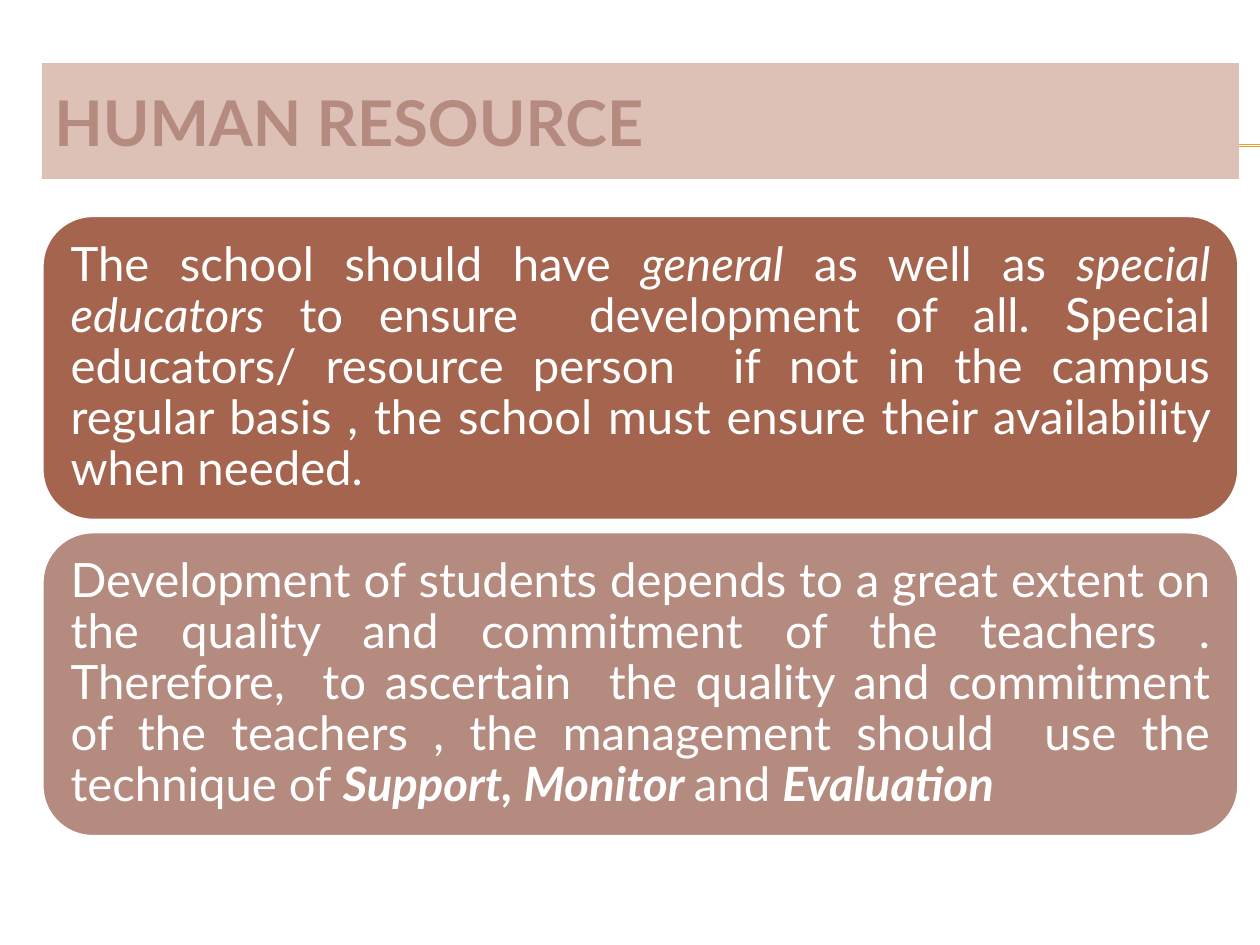
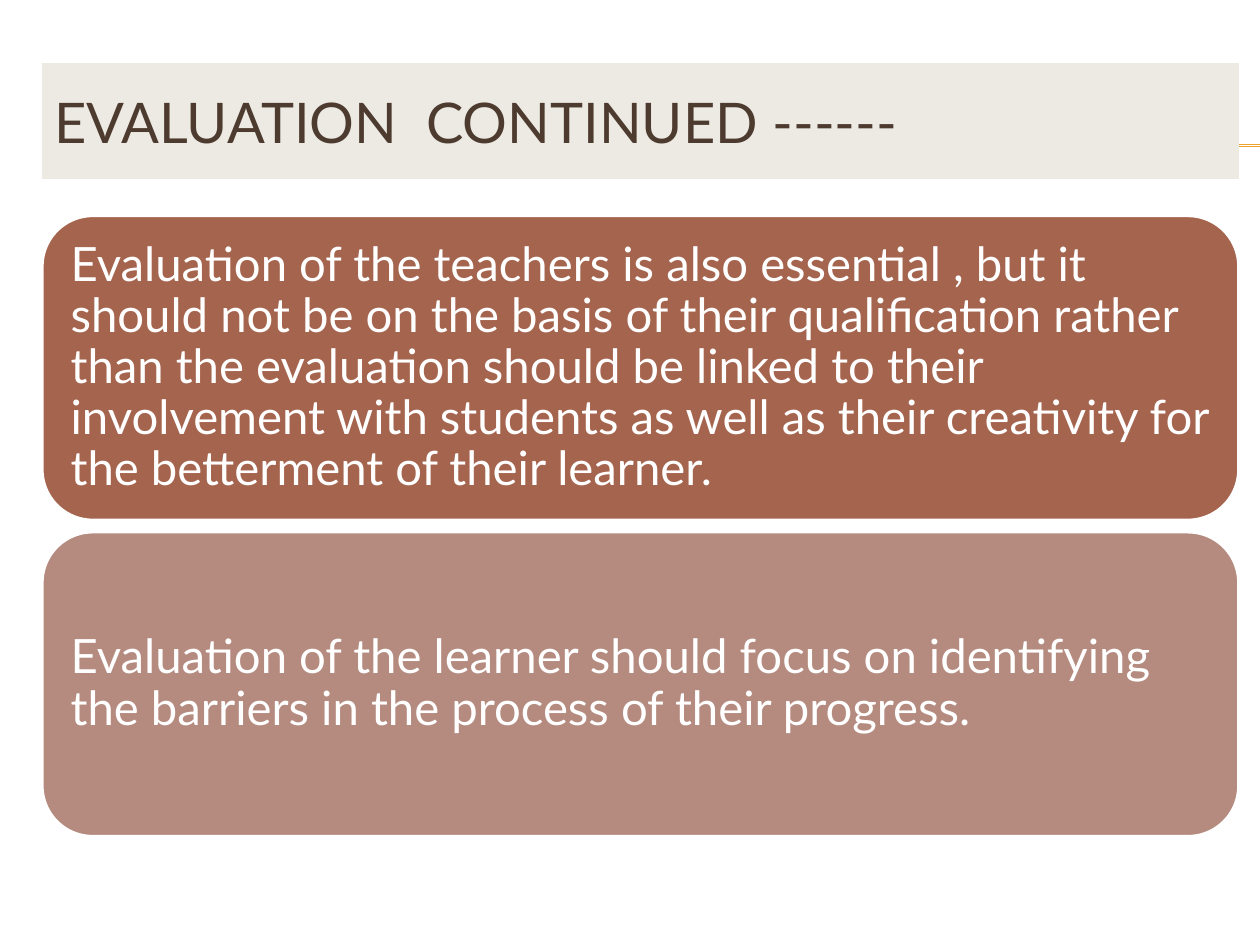
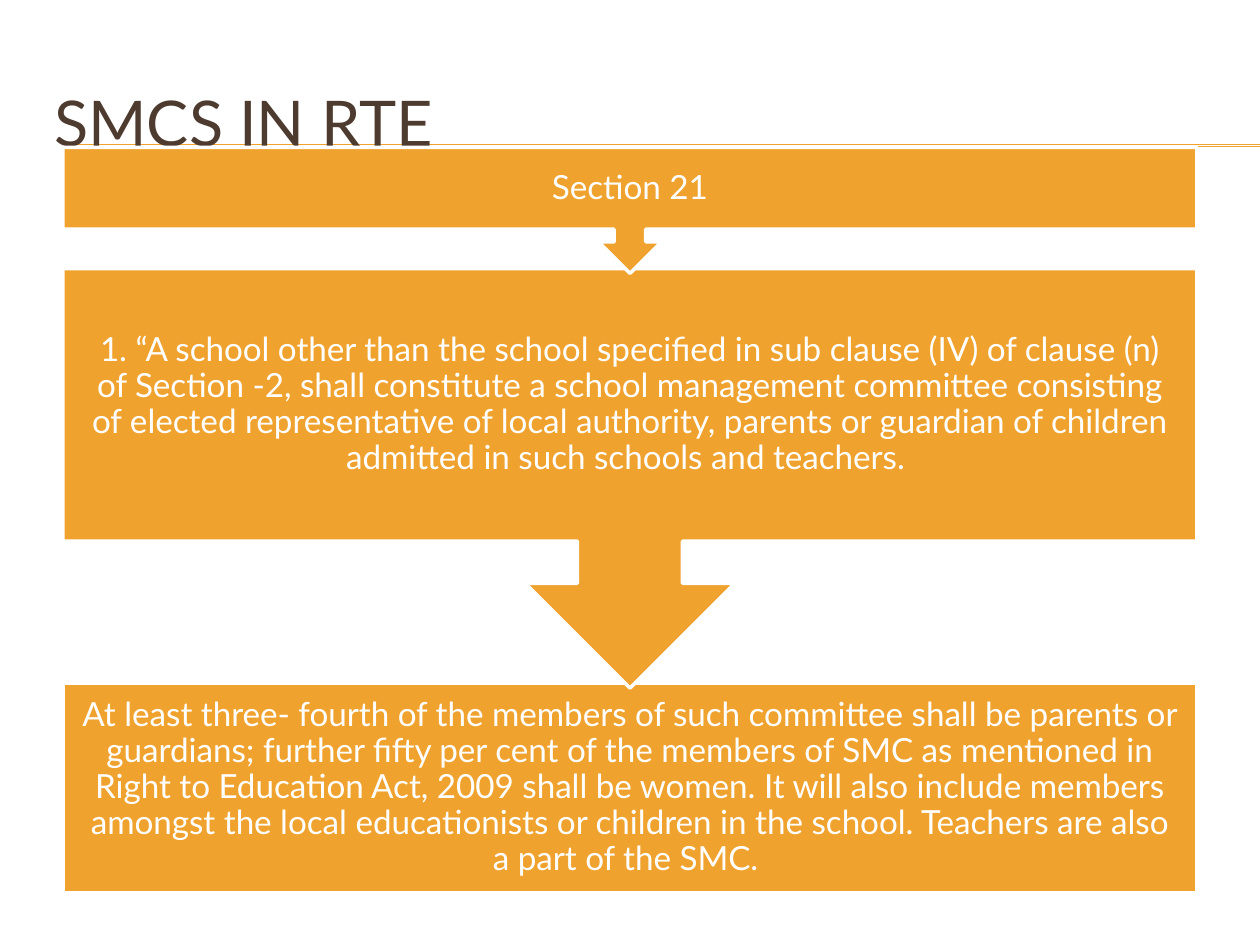
from dataclasses import dataclass

from lxml import etree
from pptx import Presentation
from pptx.dml.color import RGBColor
from pptx.enum.shapes import MSO_CONNECTOR, MSO_SHAPE
from pptx.enum.text import MSO_ANCHOR, PP_ALIGN
from pptx.oxml.ns import qn
from pptx.util import Inches, Pt

RECT = MSO_SHAPE.RECTANGLE
ROUND = MSO_SHAPE.ROUNDED_RECTANGLE
CALLOUT = MSO_SHAPE.DOWN_ARROW_CALLOUT
STRAIGHT = MSO_CONNECTOR.STRAIGHT
MIDDLE = MSO_ANCHOR.MIDDLE
LEFT, CENTER, JUSTIFY = PP_ALIGN.LEFT, PP_ALIGN.CENTER, PP_ALIGN.JUSTIFY

# The slide is a grid of 100 columns by 100 rows.
WIDTH, HEIGHT = Inches(10), Inches(7.5)
COL, ROW = WIDTH / 100, HEIGHT / 100


@dataclass(frozen=True)
class Theme:
    font: str = "Lato"
    white: str = "FFFFFF"
    dark: str = "4E3B30"
    gold: str = "F0A22E"
    rust: str = "A5644E"
    rose: str = "B58B80"
    blush: str = "DDC0B6"
    sand: str = "ECEAE3"
    title: int = 36
    small_title: int = 32
    body: int = 27
    step: int = 19


THEME = Theme()
PANELS = (THEME.rust, THEME.rose)


def color(code):
    return RGBColor.from_string(code)


def place(col, row, cols, rows):
    return [round(v) for v in (col * COL, row * ROW, cols * COL, rows * ROW)]


def write(shape, spans, size, ink, align=LEFT, inset=0.11, spacing=0.9):
    """Fill a shape with one paragraph of (text, style) spans; b is bold, i italic."""
    frame = shape.text_frame
    frame.word_wrap = True
    frame.vertical_anchor = MIDDLE
    frame.margin_left = frame.margin_right = Inches(inset)
    frame.margin_top = frame.margin_bottom = Inches(inset)
    para = frame.paragraphs[0]
    para.alignment = align
    para.line_spacing = spacing
    for text, style in spans:
        run = para.add_run()
        run.text = text
        font = run.font
        font.name, font.size = THEME.font, Pt(size)
        font.color.rgb = color(ink)
        font.bold, font.italic = "b" in style, "i" in style


def block(slide, kind, box, fill, edge=THEME.white):
    shape = slide.shapes.add_shape(kind, *place(*box))
    shape.shadow.inherit = False
    if fill:
        shape.fill.solid()
        shape.fill.fore_color.rgb = color(fill)
    else:
        shape.fill.background()
    if edge:
        shape.line.color.rgb = color(edge)
        shape.line.width = Pt(2)
    else:
        shape.line.fill.background()
    return shape


def rule(slide, row):
    left, top, width, _ = place(5.6, row, 94.4, 0)
    line = slide.shapes.add_connector(STRAIGHT, left, top, left + width, top)
    line.line.color.rgb = color(THEME.gold)
    line.line.width = Pt(0.75)
    etree.SubElement(line._element.spPr, qn("a:effectLst"))


def page(deck, title, size=THEME.title, ink=THEME.dark, band=None, style=""):
    """Add a slide with the double rule and its title band."""
    slide = deck.slides.add_slide(deck.slide_layouts[6])
    for row in (15.33, 15.47):
        rule(slide, row)
    head = block(slide, RECT, (3.33, 6.67, 95, 12.27), band, edge=None)
    write(head, [(title, style)], size, ink, inset=0.1, spacing=1)
    return slide


def panels(slide, texts, align=LEFT):
    top, tall, gap = 22.8, 32.27, 1.2
    for i, (spans, fill) in enumerate(zip(texts, PANELS)):
        box = (3.33, top + i * (tall + gap), 95, tall)
        write(block(slide, ROUND, box, fill), spans, THEME.body, THEME.white, align)


def steps(slide, items):
    """Stack (text, rows) steps, each pointing at the next and lying over it."""
    top, lap = 15.6, 0.5
    stack = []
    for text, rows in items:
        stack.append((text, top, rows))
        top += rows - lap
    kind = RECT
    for text, row, rows in reversed(stack):
        shape = block(slide, kind, (5, row, 90, rows), THEME.gold)
        write(shape, [(text, "")], THEME.step, THEME.white, CENTER, inset=0.15)
        kind = CALLOUT


def main():
    deck = Presentation()
    deck.slide_width, deck.slide_height = WIDTH, HEIGHT

    staff = page(deck, "HUMAN RESOURCE", ink=THEME.rose, band=THEME.blush, style="b")
    panels(staff, [
        [("The school should have ", ""), ("general", "i"), (" as well as ", ""),
         ("special educators", "i"),
         (" to ensure  development of all. Special educators/ resource person  if not "
          "in the campus regular basis , the school must ensure their availability "
          "when needed.", "")],
        [("Development of students depends to a great extent on the quality and "
          "commitment of the teachers . Therefore,  to ascertain  the quality and "
          "commitment of the teachers , the management should  use the technique of ", ""),
         ("Support, Monitor ", "bi"), ("and ", ""), ("Evaluation ", "bi")],
    ], JUSTIFY)

    review = page(deck, "EVALUATION  CONTINUED ------", THEME.small_title, band=THEME.sand)
    panels(review, [
        [("Evaluation of the teachers is also essential , but it should not be on the "
          "basis of their qualification rather than the evaluation should be linked to "
          "their involvement with students as well as their creativity for the "
          "betterment of their learner.", "")],
        [("Evaluation of the learner should focus on identifying the barriers in the "
          "process of their progress.", "")],
    ])

    law = page(deck, "SMCS IN RTE")
    steps(law, [
        ("Section 21", 13.33),
        ("1. “A school other than the school specified in sub clause (IV) of clause (n) "
         "of Section -2, shall constitute a school management committee consisting of "
         "elected representative of local authority, parents or guardian of children "
         "admitted in such schools and teachers. ", 44.4),
        ("At least three- fourth of the members of such committee shall be parents or "
         "guardians; further fifty per cent of the members of SMC as mentioned in Right "
         "to Education Act, 2009 shall be women. It will also include members amongst "
         "the local educationists or children in the school. Teachers are also a part "
         "of the SMC. ", 22.13),
    ])

    deck.save("out.pptx")


if __name__ == "__main__":
    main()
